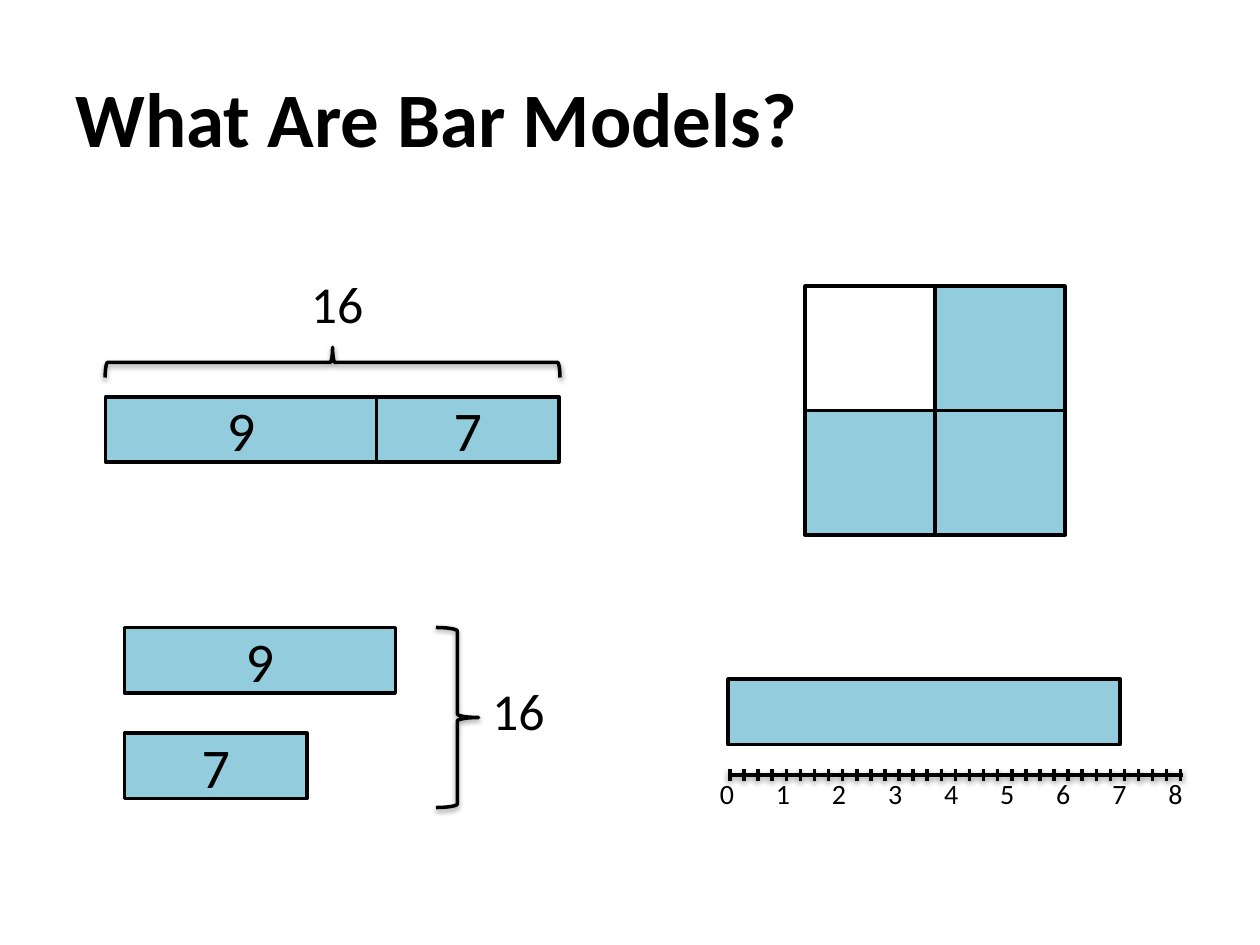
from dataclasses import dataclass

from lxml.etree import SubElement
from pptx import Presentation
from pptx.dml.color import RGBColor
from pptx.enum.shapes import MSO_CONNECTOR, MSO_SHAPE
from pptx.enum.text import MSO_ANCHOR, PP_ALIGN
from pptx.oxml.ns import qn
from pptx.util import Cm, Pt


@dataclass(frozen=True)
class Theme:
    font: str = "Calibri"
    ink: RGBColor = RGBColor(0x00, 0x00, 0x00)
    bar: RGBColor = RGBColor(0x93, 0xCD, 0xDD)
    blank: RGBColor = RGBColor(0xFF, 0xFF, 0xFF)
    title_size: float = 44
    bar_size: float = 32
    total_size: float = 29.6
    scale_size: float = 16
    line: float = 2


THEME = Theme()
BAR_HEIGHT = 1.32
NINE_WIDTH, SEVEN_WIDTH = 5.46, 3.68


def write(shape, text, size, align=PP_ALIGN.CENTER, bold=False):
    para = shape.text_frame.paragraphs[0]
    para.text = text
    para.alignment = align
    for span in para.runs:
        span.font.name = THEME.font
        span.font.size = Pt(size)
        span.font.bold = bold
        span.font.color.rgb = THEME.ink


def add_label(page, text, left, top, width, height, size, **style):
    box = page.shapes.add_textbox(Cm(left), Cm(top), Cm(width), Cm(height))
    box.text_frame.word_wrap = True
    write(box, text, size, **style)
    return box


def draw_line(shape):
    shape.line.color.rgb = THEME.ink
    shape.line.width = Pt(THEME.line)


def add_soft_shadow(shape):
    """Put a faint shadow just below the shape."""
    effects = SubElement(shape.element.spPr, qn("a:effectLst"))
    shadow = SubElement(effects, qn("a:outerShdw"), blurRad="40000",
                        dist="20000", dir="5400000", rotWithShape="0")
    colour = SubElement(shadow, qn("a:srgbClr"), val=str(THEME.ink))
    SubElement(colour, qn("a:alpha"), val="38000")


def add_bar(page, left, top, width, height=BAR_HEIGHT, text="", fill=THEME.bar):
    bar = page.shapes.add_shape(MSO_SHAPE.RECTANGLE, Cm(left), Cm(top), Cm(width), Cm(height))
    bar.shadow.inherit = False
    bar.fill.solid()
    bar.fill.fore_color.rgb = fill
    draw_line(bar)
    if text:
        bar.text_frame.vertical_anchor = MSO_ANCHOR.MIDDLE
        write(bar, text, THEME.bar_size)


def add_brace(page, left, top, width, height, rotation=0):
    brace = page.shapes.add_shape(MSO_SHAPE.RIGHT_BRACE, Cm(left), Cm(top), Cm(width), Cm(height))
    brace.rotation = rotation
    brace.fill.background()
    draw_line(brace)
    add_soft_shadow(brace)


def add_rule(page, left, right, y, dotted=False):
    rule = page.shapes.add_connector(MSO_CONNECTOR.STRAIGHT, Cm(left), Cm(y), Cm(right), Cm(y))
    draw_line(rule)
    if dotted:
        SubElement(rule.element.spPr.find(qn("a:ln")), qn("a:prstDash"), val="dot")
    add_soft_shadow(rule)


def add_total(page, left, top):
    add_label(page, "16", left, top, 3.18, 1.45, THEME.total_size)


def add_part_whole_model(page):
    left, top = 2.13, 8
    add_bar(page, left, top, NINE_WIDTH, text="9")
    add_bar(page, left + NINE_WIDTH, top, SEVEN_WIDTH, text="7")
    add_brace(page, 6.4, 2.72, 0.61, 9.17, rotation=270)
    add_total(page, 5.21, 5.36)


def add_comparison_model(page):
    left, top = 2.51, 12.65
    add_bar(page, left, top, NINE_WIDTH, text="9")
    add_bar(page, left, top + 2.13, SEVEN_WIDTH, text="7")
    add_brace(page, 8.79, top, 0.86, 3.63)
    add_total(page, 8.86, 13.56)


def add_number_line(page):
    left, y = 14.68, 15.62
    add_bar(page, left, 13.69, 7.9)
    add_rule(page, left, 23.85, y)
    # Two dotted rules, one on each side of the axis, make the tick marks.
    for offset in (-0.08, 0.08):
        add_rule(page, left, 23.83, y + offset, dotted=True)
    for number in range(9):
        label = add_label(page, str(number), 14.3 + 1.13 * number, 15.53,
                          0.71, 0.99, THEME.scale_size)
        label.text_frame.margin_left = label.text_frame.margin_right = 0


def add_quarters(page):
    left, top, width, height = 16.23, 5.77, 2.62, 2.51
    for column in range(2):
        for row in range(2):
            fill = THEME.blank if column == row == 0 else THEME.bar
            add_bar(page, left + column * width, top + row * height, width, height, fill=fill)


def main():
    deck = Presentation()
    deck.slide_width, deck.slide_height = Cm(25.4), Cm(19.05)
    page = deck.slides.add_slide(deck.slide_layouts[6])
    title = add_label(page, "What Are Bar Models?", 1.27, 0.76, 16.21, 3.18,
                      THEME.title_size, align=PP_ALIGN.LEFT, bold=True)
    title.text_frame.vertical_anchor = MSO_ANCHOR.MIDDLE
    add_part_whole_model(page)
    add_comparison_model(page)
    add_number_line(page)
    add_quarters(page)
    deck.save("out.pptx")


if __name__ == "__main__":
    main()
